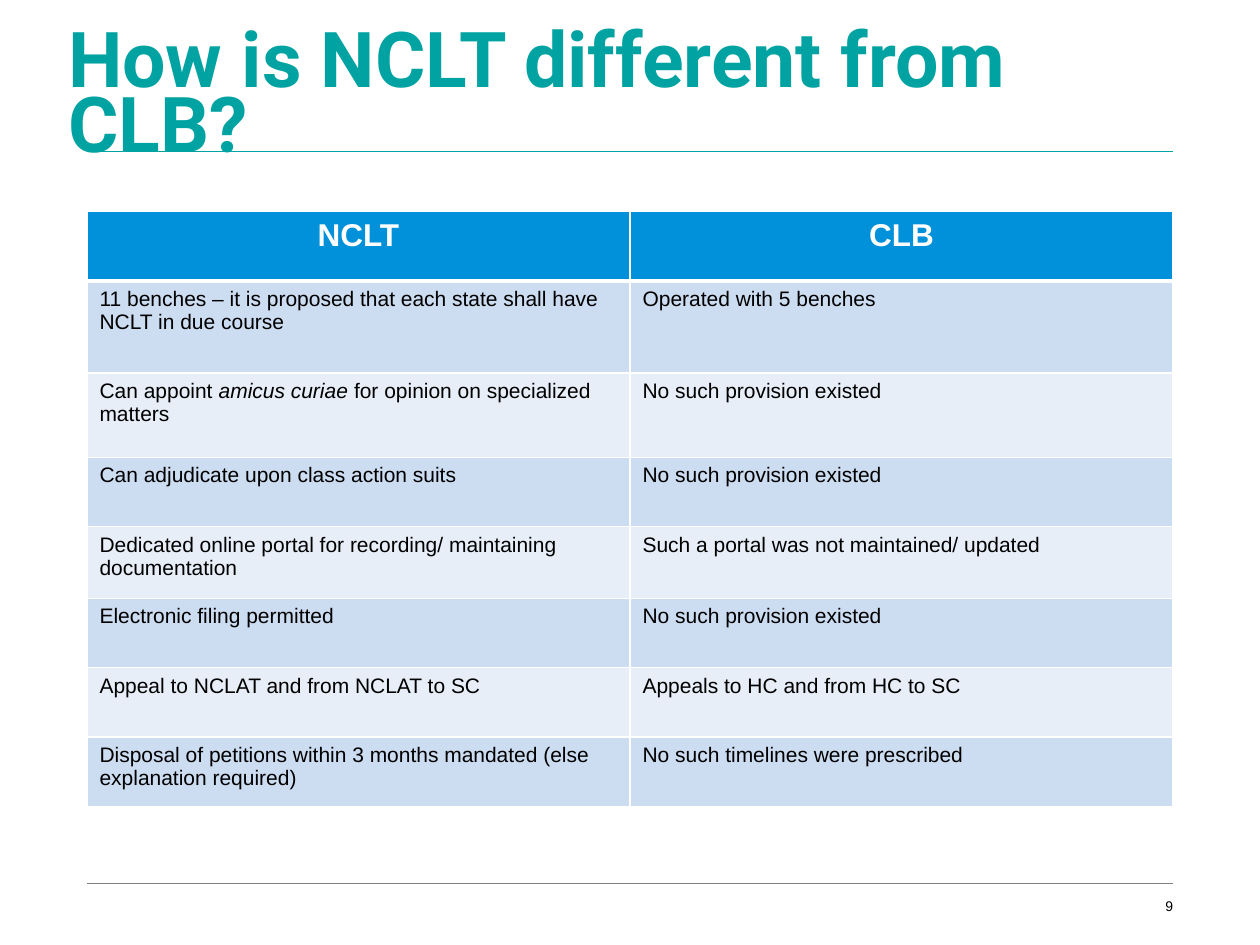
from lxml.etree import SubElement
from pptx import Presentation
from pptx.dml.color import RGBColor
from pptx.enum.shapes import MSO_CONNECTOR as Connector
from pptx.enum.text import MSO_ANCHOR as Anchor, PP_ALIGN as Align
from pptx.oxml.ns import qn
from pptx.util import Inches, Pt

COLORS = {
    "teal": "00A3A1", "gray": "808080", "header": "0091DA", "odd": "CCDCF1",
    "even": "E7EEF8", "white": "FFFFFF", "black": "000000",
}
LEFT, RIGHT = 0.69, 9.31
ROW_HEIGHTS = [0.55, 0.73, 0.67, 0.55, 0.57, 0.55, 0.55, 0.55]
MISSING = "No such provision existed"
ROWS = [
    ("NCLT", "CLB"),
    ("11 benches – it is proposed that each state shall have NCLT in due course",
     "Operated with 5 benches"),
    ("Can appoint *amicus curiae *for opinion on specialized matters", MISSING),
    ("Can adjudicate upon class action suits", MISSING),
    ("Dedicated online portal for recording/ maintaining documentation",
     "Such a portal was not maintained/ updated"),
    ("Electronic filing permitted", MISSING),
    ("Appeal to NCLAT and from NCLAT to SC", "Appeals to HC and from HC to SC"),
    ("Disposal of petitions within 3 months mandated (else explanation required)",
     "No such timelines were prescribed"),
]


def rgb(name):
    return RGBColor.from_string(COLORS[name])


def write(para, text, size, color, font="Arial", bold=False, align=Align.LEFT):
    """Fill a paragraph; text between asterisks is italic."""
    para.alignment = align
    para.font.name, para.font.size, para.font.bold = font, Pt(size), bold
    para.font.color.rgb = rgb(color)
    for index, part in enumerate(text.split("*")):
        span = para.add_run()
        span.text = part
        if index % 2:
            span.font.italic = True


def add_rule(page, top, color):
    rule = page.shapes.add_connector(
        Connector.STRAIGHT, Inches(LEFT), Inches(top), Inches(RIGHT), Inches(top))
    rule.line.color.rgb = rgb(color)
    rule.line.width = Pt(0.5)
    SubElement(rule._element.spPr, qn("a:effectLst"))


def add_text(page, place, text, insets=(0, 0), anchor=Anchor.TOP, spacing=None, **style):
    frame = page.shapes.add_textbox(*map(Inches, place)).text_frame
    frame.word_wrap = True
    frame.vertical_anchor = anchor
    frame.margin_left, frame.margin_top = map(Inches, insets)
    frame.margin_right = frame.margin_bottom = 0
    para = frame.paragraphs[0]
    if spacing:
        para.line_spacing = spacing
    write(para, text, **style)


def add_borders(cell, bottom):
    properties = cell._tc.get_or_add_tcPr()
    for side, width in (("L", 1), ("R", 1), ("T", 1), ("B", bottom)):
        line = SubElement(properties, qn(f"a:ln{side}"), w=str(Pt(width)))
        fill = SubElement(line, qn("a:solidFill"))
        SubElement(fill, qn("a:srgbClr"), val=COLORS["white"])


def add_comparison(page):
    table = page.shapes.add_table(
        len(ROWS), 2, Inches(LEFT), Inches(1.68),
        Inches(RIGHT - LEFT), Inches(sum(ROW_HEIGHTS))).table
    for number, (texts, height) in enumerate(zip(ROWS, ROW_HEIGHTS)):
        table.rows[number].height = Inches(height)
        header = number == 0
        fill = "header" if header else "odd" if number % 2 else "even"
        style = (dict(size=18, color="white", bold=True, align=Align.CENTER)
                 if header else dict(size=12, color="black"))
        for column, text in enumerate(texts):
            cell = table.cell(number, column)
            add_borders(cell, bottom=3 if header else 1)
            cell.fill.solid()
            cell.fill.fore_color.rgb = rgb(fill)
            write(cell.text_frame.paragraphs[0], text, **style)


def main():
    """Build the NCLT and CLB comparison slide."""
    deck = Presentation()
    deck.slide_width, deck.slide_height = Inches(10), Inches(7.5)
    page = deck.slides.add_slide(deck.slide_layouts[6])
    add_rule(page, 7.01, "gray")
    add_text(page, (8.76, 7.04, 0.55, 0.31), "9", insets=(0.08, 0.08),
             size=8, color="black", align=Align.RIGHT)
    add_rule(page, 1.2, "teal")
    add_text(page, (0.54, 0.4, 8.77, 0.8), "How is NCLT different from CLB?",
             anchor=Anchor.MIDDLE, spacing=0.7,
             size=44, color="teal", font="Roboto", bold=True)
    add_comparison(page)
    deck.save("out.pptx")


if __name__ == "__main__":
    main()
